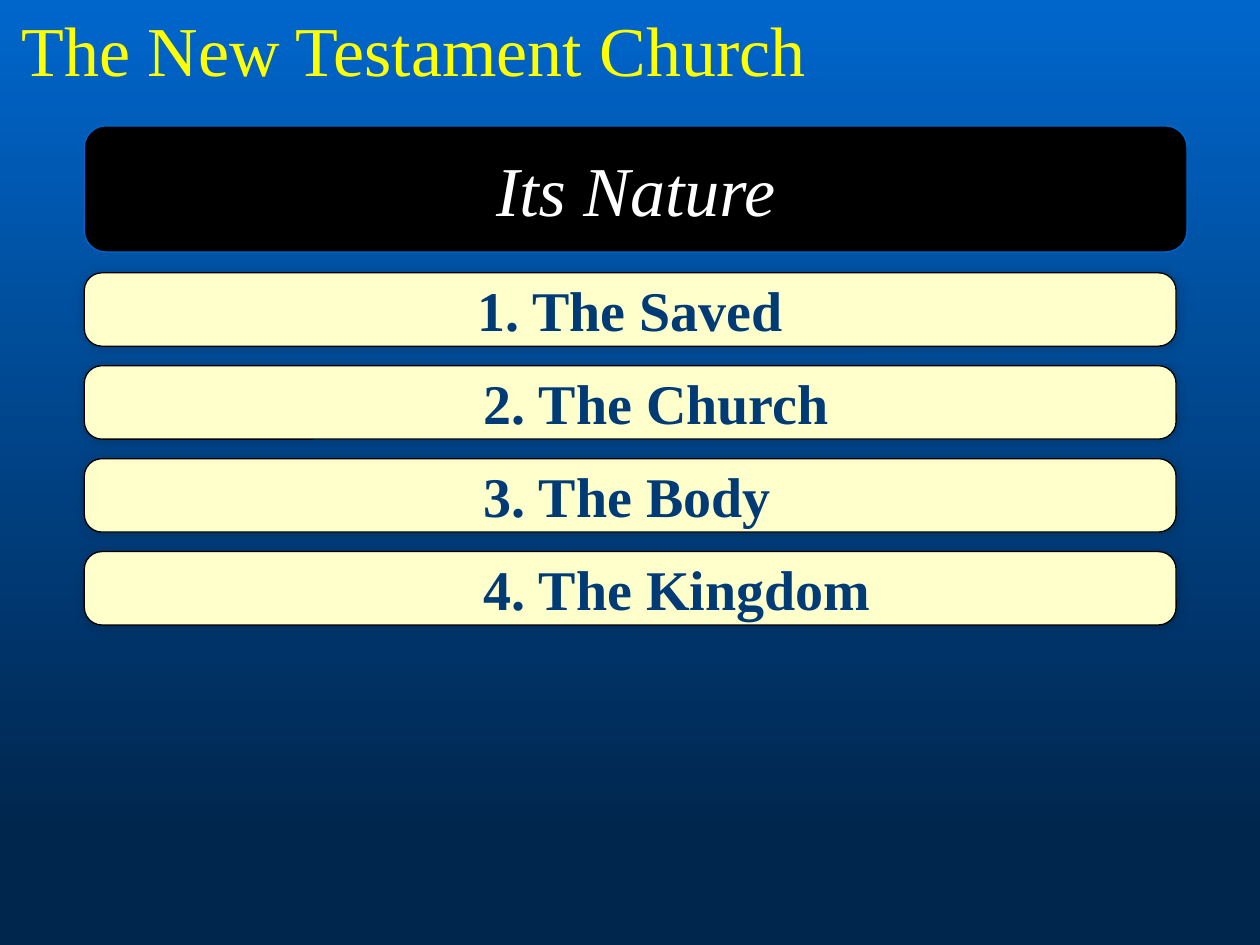
import pptx
import pptx.util
import pptx.dml.color
import pptx.enum.shapes
import pptx.enum.text
import pptx.oxml
import pptx.oxml.ns

Cm = pptx.util.Cm
Pt = pptx.util.Pt
Align = pptx.enum.text.PP_ALIGN


class Theme:
    font = "Times New Roman"
    sky = "0066CC"
    deep = "00264D"
    title = "FFFF00"
    black = "000000"
    white = "FFFFFF"
    cream = "FFFFCC"
    navy = "003B76"
    large = 40
    small = 32


def rgb(code):
    return pptx.dml.color.RGBColor.from_string(code)


def write(frame, text, size, color, bold=False, italic=False, align=Align.CENTER):
    para = frame.paragraphs[0]
    para.alignment = align
    para.space_before = Pt(size * 0.2)
    run = para.add_run()
    run.text = text
    font = run.font
    font.name, font.size = Theme.font, Pt(size)
    font.bold, font.italic = bold, italic
    font.color.rgb = rgb(color)


def panel(slide, box, fill, line, round):
    kind = pptx.enum.shapes.MSO_SHAPE.ROUNDED_RECTANGLE
    shape = slide.shapes.add_shape(kind, *map(Cm, box))
    shape.adjustments[0] = round
    shape.shadow.inherit = False
    shape.fill.solid()
    shape.fill.fore_color.rgb = rgb(fill)
    shape.line.color.rgb = rgb(line)
    shape.line.width = Pt(0.75)
    shape.text_frame.word_wrap = True
    shape.text_frame.vertical_anchor = pptx.enum.text.MSO_ANCHOR.MIDDLE
    return shape


def glow(shape):
    effects = shape._element.spPr.find(pptx.oxml.ns.qn("a:effectLst"))
    effects.append(pptx.oxml.parse_xml(
        f'<a:outerShdw {pptx.oxml.ns.nsdecls("a")} blurRad="{Pt(6)}" dist="0" dir="13500000">'
        f'<a:srgbClr val="{Theme.black}"><a:alpha val="20000"/></a:srgbClr></a:outerShdw>'))


def sky(slide):
    fill = slide.background.fill
    fill.gradient()
    fill.gradient_angle = 270
    for stop, color, place in zip(fill.gradient_stops, (Theme.sky, Theme.deep), (0, 0.88)):
        stop.color.rgb = rgb(color)
        stop.position = place


def title(slide, box, text):
    frame = slide.shapes.add_textbox(*map(Cm, box)).text_frame
    frame.word_wrap = False
    frame.auto_size = pptx.enum.text.MSO_AUTO_SIZE.SHAPE_TO_FIT_TEXT
    write(frame, text, Theme.large, Theme.title)


def banner(slide, box, text):
    shape = panel(slide, box, Theme.black, Theme.sky, 0.17)
    write(shape.text_frame, text, Theme.large, Theme.white, italic=True)


def points(slide, box, items, tall=1.48, inset=7.95):
    left, top, width, height = box
    step = (height - tall) / (len(items) - 1)
    for row, item in enumerate(items):
        bar = panel(slide, (left, top + row * step, width, tall), Theme.cream, Theme.black, 0.24)
        glow(bar)
        align = Align.LEFT if row else Align.CENTER
        if row:
            bar.text_frame.margin_left = Cm(inset)
        write(bar.text_frame, f"{row + 1}. {item}", Theme.small, Theme.navy, bold=True, align=align)


def main():
    deck = pptx.Presentation()
    deck.slide_width, deck.slide_height = Cm(25.4), Cm(19.05)
    slide = deck.slides.add_slide(deck.slide_layouts[6])
    sky(slide)
    title(slide, (0.1, 0, 16.48, 1.96), "The New Testament Church")
    banner(slide, (1.7, 2.54, 22.23, 2.54), "Its Nature")
    points(slide, (1.7, 5.5, 22.01, 7.1), ["The Saved", "The Church", "The Body", "The Kingdom"])
    deck.save("out.pptx")


if __name__ == "__main__":
    main()
